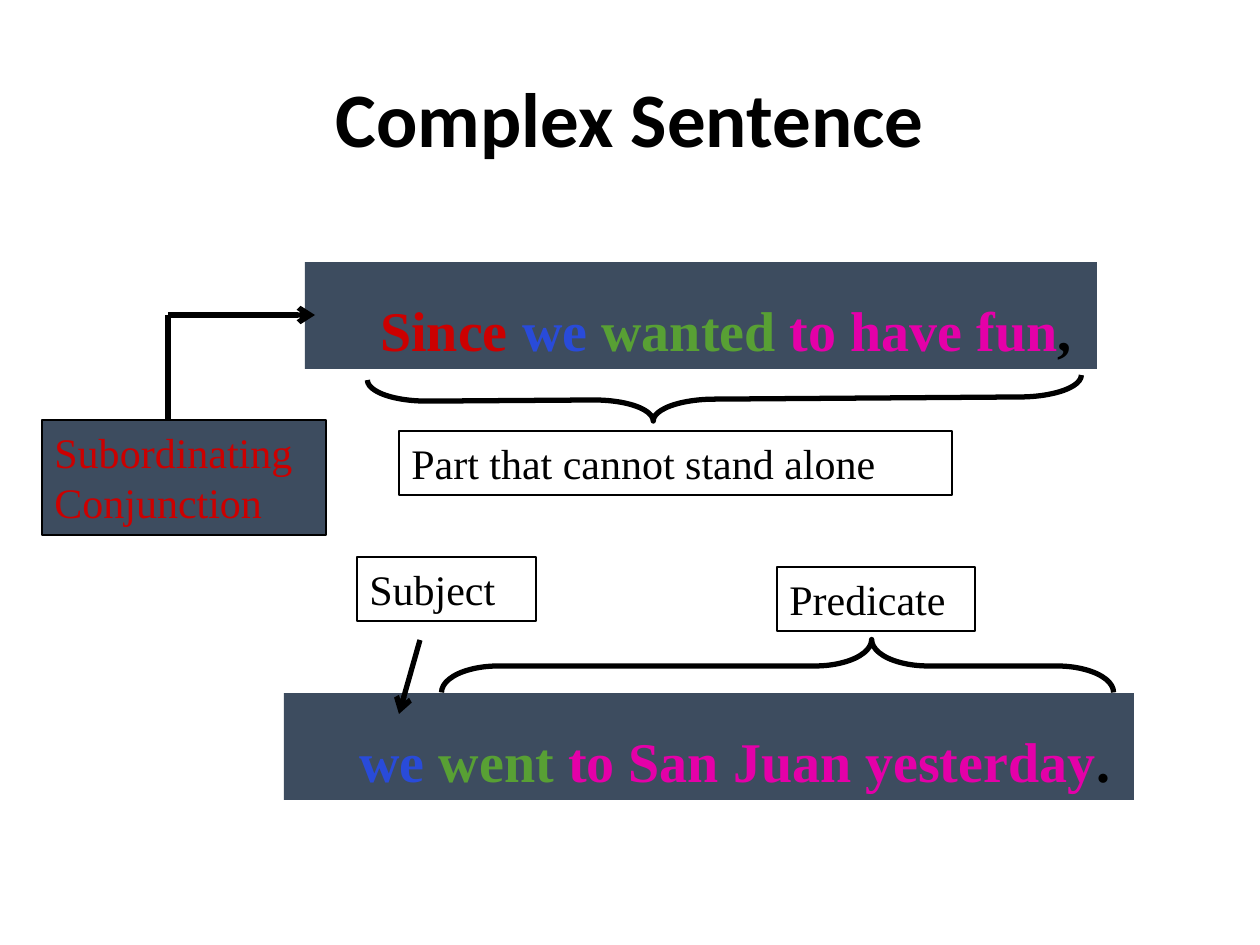
from pptx import Presentation
from pptx.dml.color import RGBColor
from pptx.enum.shapes import MSO_CONNECTOR, MSO_SHAPE
from pptx.enum.text import MSO_ANCHOR, PP_ALIGN
from pptx.oxml.ns import qn
from pptx.util import Emu, Pt
from lxml.etree import SubElement

BLACK = RGBColor(0x00, 0x00, 0x00)
WHITE = RGBColor(0xFF, 0xFF, 0xFF)
SLATE = RGBColor(0x3D, 0x4C, 0x5F)
RED = RGBColor(0xCC, 0x00, 0x00)
BLUE = RGBColor(0x29, 0x4B, 0xD9)
GREEN = RGBColor(0x58, 0xA0, 0x34)
PINK = RGBColor(0xE4, 0x00, 0xA8)
SERIF = "Times New Roman"

TITLE = "Complex Sentence"
CLAUSES = [
    ((305, 262, 792, 107), [("Since ", RED), ("we ", BLUE), ("wanted ", GREEN),
                            ("to have fun", PINK), (",", BLACK)]),
    ((284, 693, 850, 107), [("we ", BLUE), ("went ", GREEN),
                            ("to San Juan yesterday", PINK), (".", BLACK)]),
]
LABELS = [
    ((777, 567, 198, 64), ["Predicate"], BLACK, WHITE),
    ((357, 557, 179, 64), ["Subject"], BLACK, WHITE),
    ((42, 420, 284, 115), ["Subordinating", "Conjunction"], RED, SLATE),
    ((399, 431, 553, 64), ["Part that cannot stand alone"], BLACK, None),
]
BRACES = [
    ((751, 330, 53, 672), 90, (1.07, 0.36)),
    ((703, 42, 43, 714), 269.6, (1.41, 0.4)),
]
LINES = [
    ((420, 640), (399, 714), True),
    ((168, 315), (168, 420), False),
    ((168, 315), (315, 315), True),
]


def px(n):
    return Emu(round(n * 914400 / 126))


def add_text(p, text, size=24, color=BLACK, font=SERIF, bold=False):
    r = p.add_run()
    r.text = text
    r.font.size = Pt(size)
    r.font.name = font
    r.font.bold = bold
    r.font.color.rgb = color


def add_box(slide, kind, at, fill=None, width=None):
    sp = slide.shapes.add_shape(kind, *map(px, at))
    sp.shadow.inherit = False
    if fill is None:
        sp.fill.background()
    else:
        sp.fill.solid()
        sp.fill.fore_color.rgb = fill
    if width is None:
        sp.line.fill.background()
    else:
        sp.line.color.rgb = BLACK
        sp.line.width = Pt(width)
    tf = sp.text_frame
    tf.word_wrap = True
    tf.vertical_anchor = MSO_ANCHOR.TOP
    tf.paragraphs[0].alignment = PP_ALIGN.LEFT
    return sp


def add_line(slide, start, end, arrow):
    ln = slide.shapes.add_connector(MSO_CONNECTOR.STRAIGHT, *map(px, start + end))
    ln.line.color.rgb = BLACK
    ln.line.width = Pt(3)
    if arrow:
        SubElement(ln.line._get_or_add_ln(), qn("a:tailEnd"), type="arrow")
    SubElement(ln._element.spPr, qn("a:effectLst"))


def main():
    prs = Presentation()
    prs.slide_width, prs.slide_height = px(1260), px(945)
    slide = prs.slides.add_slide(prs.slide_layouts[5])

    title = slide.shapes.title
    title.left, title.top, title.width, title.height = map(px, (63, 38, 1134, 158))
    title.text_frame.vertical_anchor = MSO_ANCHOR.MIDDLE
    p = title.text_frame.paragraphs[0]
    p.alignment = PP_ALIGN.CENTER
    add_text(p, TITLE, size=44, font="Calibri", bold=True)

    for at, words in CLAUSES:
        p = add_box(slide, MSO_SHAPE.RECTANGLE, at, SLATE).text_frame.paragraphs[0]
        p.level = 1
        p.line_spacing = 1.4
        p.space_before = Pt(6.4)
        p._p.get_or_add_pPr().set("marL", str(px(63)))
        for text, color in words:
            add_text(p, text, size=32, color=color, bold=True)

    for at, rows, color, fill in LABELS:
        tf = add_box(slide, MSO_SHAPE.RECTANGLE, at, fill, 0.75).text_frame
        for i, text in enumerate(rows):
            p = tf.add_paragraph() if i else tf.paragraphs[0]
            p.alignment = PP_ALIGN.LEFT
            add_text(p, text, color=color)

    for at, angle, (curve, tip) in BRACES:
        sp = add_box(slide, MSO_SHAPE.LEFT_BRACE, at, width=3)
        sp.rotation = angle
        sp.adjustments[0] = curve
        sp.adjustments[1] = tip

    for start, end, arrow in LINES:
        add_line(slide, start, end, arrow)

    prs.save("out.pptx")


if __name__ == "__main__":
    main()
